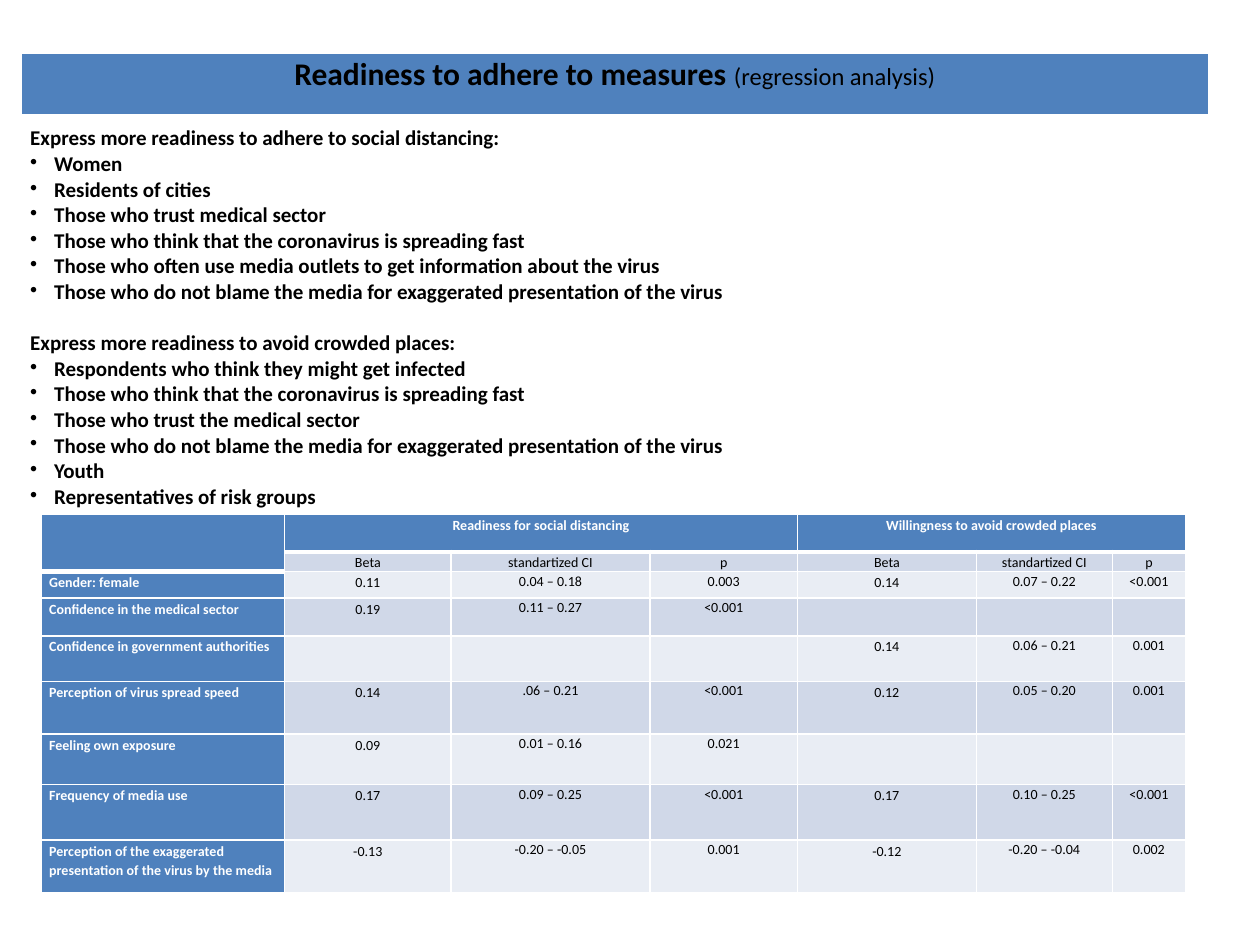
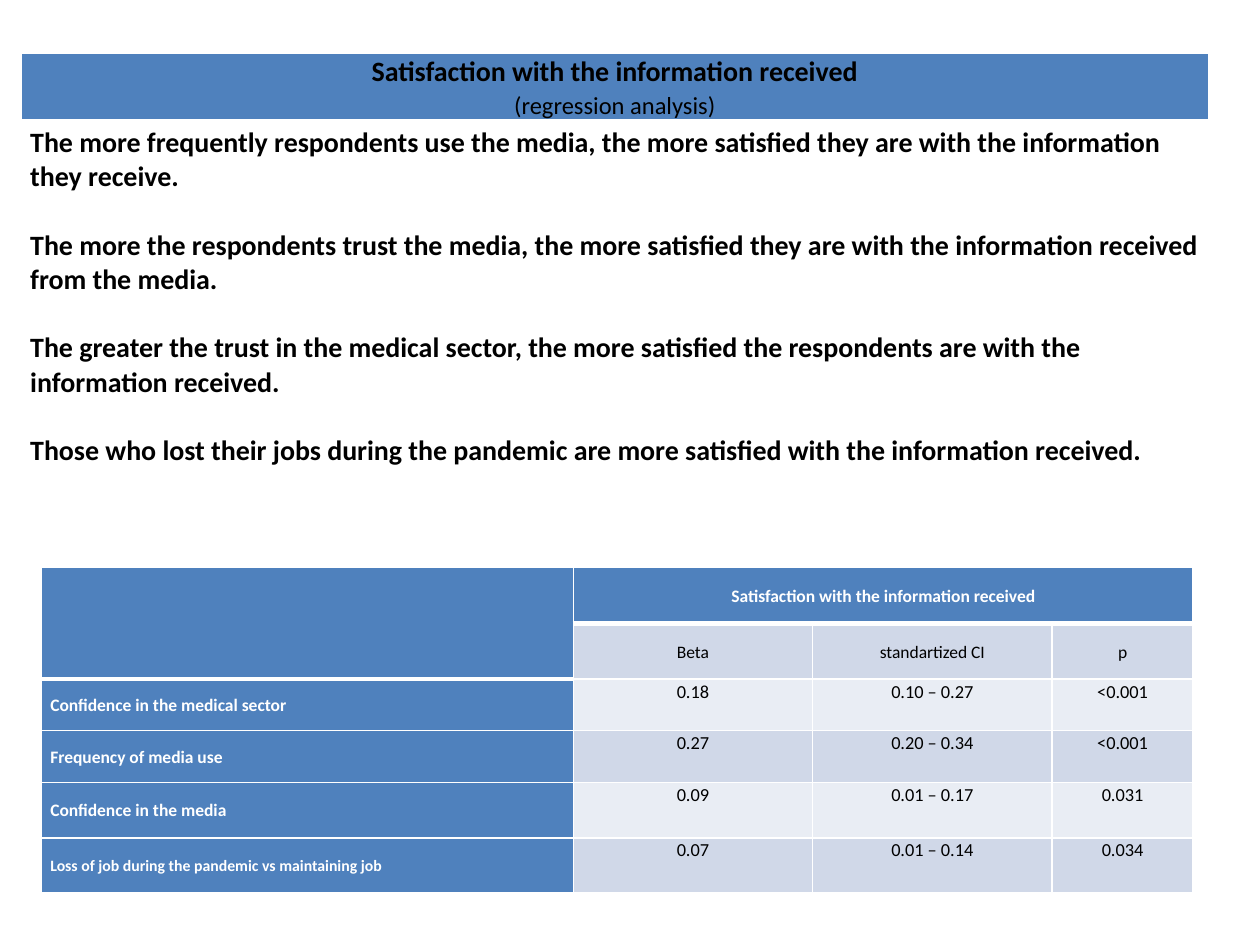
import pptx
import pptx.dml.color
import pptx.enum.text
import pptx.oxml
import pptx.oxml.ns
import pptx.util
from pptx.util import Inches

BLUE, BAND, PALE = "4F81BD", "D0D8E8", "E9EDF4"
WHITE, BLACK = "FFFFFF", "000000"
FACE = "Calibri"
ALIGN = pptx.enum.text.PP_ALIGN
ANCHOR = pptx.enum.text.MSO_ANCHOR


def color(code):
    return pptx.dml.color.RGBColor.from_string(code)


def node(xml):
    return pptx.oxml.parse_xml(xml.replace(" ", f" {pptx.oxml.ns.nsdecls('a')} ", 1))


class Deck:
    """Holds the shared style and the current slide."""

    def __init__(self):
        self.show = pptx.Presentation()
        self.show.slide_width, self.show.slide_height = Inches(10), Inches(7.5)

    def start(self):
        self.slide = self.show.slides.add_slide(self.show.slide_layouts[6])

    def font(self, font, size, bold=True, ink=BLACK):
        font.name, font.size, font.bold = FACE, pptx.util.Pt(size), bold
        font.color.rgb = color(ink)

    def grid(self, left, top, cols, rows):
        """An unstyled table with the given column widths and row heights."""
        table = self.slide.shapes.add_table(
            len(rows), len(cols), Inches(left), Inches(top),
            Inches(sum(cols)), Inches(sum(rows))).table
        table.first_row = table.horz_banding = False
        for part, width in zip(table.columns, cols):
            part.width = Inches(width)
        for part, height in zip(table.rows, rows):
            part.height = Inches(height)
        return table

    def paint(self, cell, fill, heavy, inset=0.07, anchor=ANCHOR.TOP):
        """White rules, thicker on the heavy sides, then fill and margins."""
        props = cell._tc.get_or_add_tcPr()
        for side in "LRTB":
            width = pptx.util.Pt(3 if side in heavy else 1)
            props.append(node(
                f'<a:ln{side} w="{width}"><a:solidFill>'
                f'<a:srgbClr val="{WHITE}"/></a:solidFill></a:ln{side}>'))
        cell.fill.solid()
        cell.fill.fore_color.rgb = color(fill)
        cell.margin_left = cell.margin_right = Inches(inset)
        cell.margin_top = cell.margin_bottom = 0
        cell.vertical_anchor = anchor

    def panel(self, top, height, fill):
        """A full-width table of one cell."""
        cell = self.grid(0.17, top, [9.42], [height]).cell(0, 0)
        self.paint(cell, fill, "B")
        return cell.text_frame

    def title(self, lines):
        """Blue band; each line is a list of (text, size, bold) runs."""
        frame = self.panel(0.42, 0.5, BLUE)
        for i, line in enumerate(lines):
            para = frame.add_paragraph() if i else frame.paragraphs[0]
            para.alignment, para.line_spacing = ALIGN.CENTER, 1.07
            for text, size, bold in line:
                run = para.add_run()
                run.text = text
                self.font(run.font, size, bold)

    def body(self, groups, size):
        """Each group is a heading followed by its bullets."""
        frame = self.panel(1, 2.96, WHITE)
        for i, group in enumerate(groups):
            for j, text in enumerate(group):
                para = frame.add_paragraph() if i or j else frame.paragraphs[0]
                para.text = text
                if i and not j:
                    para.space_before = pptx.util.Pt(1.22 * size)
                self.font(para.font, size)
                if j:
                    self.bullet(para)

    def bullet(self, para):
        props = para._p.get_or_add_pPr()
        step = Inches(0.19)
        props.set("marL", str(step))
        props.set("indent", str(-step))
        mark = node('<a:buChar char="•"/>')
        props.find(pptx.oxml.ns.qn("a:defRPr")).addprevious(mark)

    def cell(self, cell, text, row, col, size, lead, inset, anchor):
        head = row == 0 or col == 0
        heavy = "T" * (row == (1 if col else 2)) + "B" * (row == (0 if col else 1))
        fill = BLUE if head else BAND if row % 2 else PALE
        self.paint(cell, fill, heavy, inset, anchor)
        para = cell.text_frame.paragraphs[0]
        para.text = text
        para.line_spacing = lead
        para.alignment = ALIGN.CENTER if col or not row else ALIGN.LEFT
        self.font(para.font, size, head, WHITE if head else BLACK)

    def table(self, top, cols, rows, groups, data, style):
        """A header of three-column groups over rows of results."""
        lines = [[""] + [t for g in groups for t in (g, "", "")],
                 [""] + ["Beta", "standartized CI", "p"] * len(groups)] + data
        table = self.grid(0.33, top, cols, rows)
        for r, line in enumerate(lines):
            for c, text in enumerate(line):
                self.cell(table.cell(r, c), text, r, c, **style(r, c))
        table.cell(0, 0).merge(table.cell(1, 0))
        for c in range(1, len(cols), 3):
            table.cell(0, c).merge(table.cell(0, c + 2))


def dense(row, col):
    wide = row < 2 or col in (0, 1, 4)
    return dict(size=8, lead=1.15 if wide else 1.07, inset=0.06, anchor=ANCHOR.TOP)


def roomy(row, col):
    value = row > 1 and col > 0
    size = 10.5 if value else 9 if row == 5 else 10
    return dict(size=size, lead=1.07, inset=0.07,
                anchor=ANCHOR.TOP if value else ANCHOR.MIDDLE)


def main():
    deck = Deck()
    note = "(regression analysis)"
    none = [""] * 3

    # Readiness to adhere
    deck.start()
    deck.title([[("Readiness to adhere to measures ", 18, True), (note, 14, False)]])
    fast = "Those who think that the coronavirus is spreading fast"
    blame = "Those who do not blame the media for exaggerated presentation of the virus"
    deck.body([
        ["Express more readiness to adhere to social distancing:",
         "Women", "Residents of cities", "Those who trust medical sector", fast,
         "Those who often use media outlets to get information about the virus", blame],
        ["Express more readiness to avoid crowded places:",
         "Respondents who think they might get infected", fast,
         "Those who trust the medical sector", blame,
         "Youth", "Representatives of risk groups"],
    ], 12)
    deck.table(
        4.08, [1.93, 1.32, 1.58, 1.17, 1.42, 1.08, 0.58],
        [0.3, 0.15, 0.21, 0.3, 0.36, 0.42, 0.4, 0.44, 0.42],
        ["Readiness for social distancing", "Willingness to avoid crowded places"],
        [["Gender: female", "0.11", "0.04 – 0.18", "0.003", "0.14", "0.07 – 0.22", "<0.001"],
         ["Confidence in the medical sector", "0.19", "0.11 – 0.27", "<0.001"] + none,
         ["Confidence in government authorities"] + none + ["0.14", "0.06 – 0.21", "0.001"],
         ["Perception of virus spread speed",
          "0.14", ".06 – 0.21", "<0.001", "0.12", "0.05 – 0.20", "0.001"],
         ["Feeling own exposure", "0.09", "0.01 – 0.16", "0.021"] + none,
         ["Frequency of media use",
          "0.17", "0.09 – 0.25", "<0.001", "0.17", "0.10 – 0.25", "<0.001"],
         ["Perception of the exaggerated presentation of the virus by the media",
          "-0.13", "-0.20 – -0.05", "0.001", "-0.12", "-0.20 – -0.04", "0.002"]],
        dense)

    # Satisfaction with information
    deck.start()
    topic = "Satisfaction with the information received"
    deck.title([[(topic, 16, True)], [(note, 14, False)]])
    deck.body([
        ["The more frequently respondents use the media, the more satisfied "
         "they are with the information they receive."],
        ["The more the respondents trust the media, the more satisfied "
         "they are with the information received from the media."],
        ["The greater the trust in the medical sector, the more satisfied "
         "the respondents are with the information received."],
        ["Those who lost their jobs during the pandemic are more satisfied "
         "with the information received."],
    ], 16)
    deck.table(
        4.5, [4.22, 1.9, 1.9, 1.12], [0.45, 0.44, 0.41, 0.41, 0.44, 0.44], [topic],
        [["Confidence in the medical sector", "0.18", "0.10 – 0.27", "<0.001"],
         ["Frequency of media use", "0.27", "0.20 – 0.34", "<0.001"],
         ["Confidence in the media", "0.09", "0.01 – 0.17", "0.031"],
         ["Loss of job during the pandemic vs maintaining job",
          "0.07", "0.01 – 0.14", "0.034"]],
        roomy)

    deck.show.save("out.pptx")


if __name__ == "__main__":
    main()
